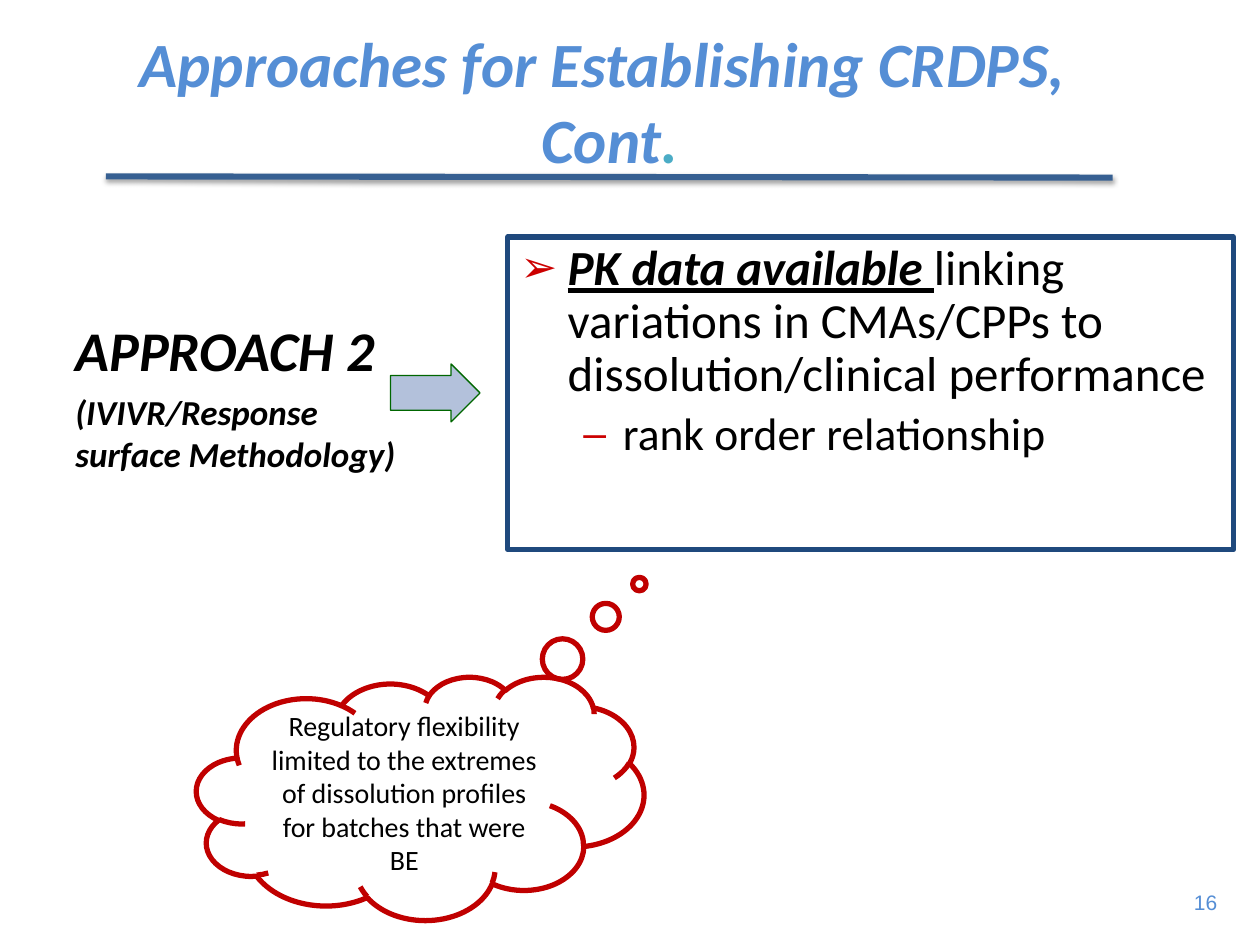
from dataclasses import dataclass, field
from typing import Optional

from lxml import etree
from pptx import Presentation
from pptx.dml.color import RGBColor
from pptx.enum.shapes import MSO_CONNECTOR, MSO_SHAPE
from pptx.enum.text import MSO_ANCHOR, MSO_AUTO_SIZE, PP_ALIGN
from pptx.oxml.ns import qn
from pptx.util import Pt

LEFT, MID, RIGHT = PP_ALIGN.LEFT, PP_ALIGN.CENTER, PP_ALIGN.RIGHT
TOP, CENTRE = MSO_ANCHOR.TOP, MSO_ANCHOR.MIDDLE
FIXED = MSO_AUTO_SIZE.NONE
CLOUD, ARROW = MSO_SHAPE.CLOUD_CALLOUT, MSO_SHAPE.RIGHT_ARROW

BLACK = RGBColor(0x00, 0x00, 0x00)
BLUE = RGBColor(0x55, 0x8E, 0xD5)
TEAL = RGBColor(0x4B, 0xAC, 0xC6)
NAVY = RGBColor(0x1F, 0x49, 0x7D)
STEEL = RGBColor(0x37, 0x60, 0x92)
PALE = RGBColor(0xB3, 0xC1, 0xDB)
GREEN = RGBColor(0x00, 0x66, 0x00)
RED = RGBColor(0xC0, 0x00, 0x00)
MARK = RGBColor(0xCC, 0x00, 0x00)


@dataclass
class Run:
    text: str
    size: float
    color: RGBColor = BLACK
    form: dict = field(default_factory=dict)


@dataclass
class Bullet:
    char: str
    margin: float
    hang: float


@dataclass
class Para:
    runs: list[Run]
    form: dict = field(default_factory=dict)
    bullet: Optional[Bullet] = None


def apply(item, form: dict) -> None:
    for key, value in form.items():
        setattr(item, key, value)


def place(shape, *box: float) -> None:
    names = ("left", "top", "width", "height")
    apply(shape, dict(zip(names, map(Pt, box))))


def outline(shape, color: RGBColor, width: float) -> None:
    shape.line.color.rgb = color
    shape.line.width = Pt(width)


def add_mark(para, mark: Bullet) -> None:
    props = para._p.get_or_add_pPr()
    props.set("marL", str(Pt(mark.margin)))
    props.set("indent", str(Pt(-mark.hang)))
    tint = etree.SubElement(props, qn("a:buClr"))
    etree.SubElement(tint, qn("a:srgbClr"), val=str(MARK))
    etree.SubElement(props, qn("a:buSzPct"), val="90000")
    etree.SubElement(props, qn("a:buFont"), typeface="Arial")
    etree.SubElement(props, qn("a:buChar"), char=mark.char)


def write(shape, paras: list[Para], font: str = "Calibri",
          anchor=TOP, wrap: bool = True) -> None:
    frame = shape.text_frame
    apply(frame, {"auto_size": FIXED, "word_wrap": wrap,
                  "vertical_anchor": anchor})
    for num, item in enumerate(paras):
        para = frame.add_paragraph() if num else frame.paragraphs[0]
        if item.bullet:
            add_mark(para, item.bullet)
        apply(para, {"space_before": Pt(0), **item.form})
        for part in item.runs:
            run = para.add_run()
            run.text = part.text
            apply(run.font, {"name": font, "size": Pt(part.size), **part.form})
            run.font.color.rgb = part.color


def add_shape(slide, kind, box: tuple, adjust: tuple):
    shape = slide.shapes.add_shape(kind, *map(Pt, box))
    shape.shadow.inherit = False
    for num, value in enumerate(adjust):
        shape.adjustments[num] = value
    return shape


def add_rule(slide, ends: tuple) -> None:
    rule = slide.shapes.add_connector(MSO_CONNECTOR.STRAIGHT, *map(Pt, ends))
    outline(rule, STEEL, 3.5)
    effects = etree.SubElement(rule._element.spPr, qn("a:effectLst"))
    shade = etree.SubElement(
        effects, qn("a:outerShdw"), blurRad=str(Pt(3.1)), dist=str(Pt(1.6)),
        dir="5400000", rotWithShape="0")
    tint = etree.SubElement(shade, qn("a:srgbClr"), val=str(BLACK))
    etree.SubElement(tint, qn("a:alpha"), val="38000")


def main() -> None:
    deck = Presentation()
    deck.slide_width, deck.slide_height = Pt(720), Pt(540)
    slide = deck.slides.add_slide(deck.slide_layouts[1])
    strong = {"bold": True, "italic": True}

    # Page number
    page = slide.shapes.add_textbox(*map(Pt, (673.2, 504.7, 29.5, 21.6)))
    write(page, [Para([Run("16", 12, BLUE)], {"alignment": RIGHT})],
          font="Arial", wrap=False)

    # Title
    title = slide.shapes.title
    place(title, 24.5, 12.2, 648, 90)
    write(title, [
        Para([Run("Approaches for Establishing CRDPS, ", 36, BLUE, strong)],
             {"alignment": MID}),
        Para([Run("Cont", 36, BLUE, strong), Run(".", 36, TEAL, strong)],
             {"alignment": MID}),
    ], anchor=CENTRE)

    # Approach label
    label = slide.shapes.add_textbox(*map(Pt, (36, 177, 211, 64)))
    write(label, [
        Para([Run("APPROACH 2", 32, form=strong)]),
        Para([Run("(IVIVR/Response surface Methodology)", 20, form=strong)],
             {"space_before": Pt(4)}),
    ])

    # Framed list
    body = slide.placeholders[1]
    place(body, 290.2, 135.4, 414.7, 178.6)
    outline(body, NAVY, 3)
    tight = {"alignment": LEFT, "line_spacing": 0.9}
    write(body, [
        Para([Run("PK data available ", 28,
                  form={**strong, "underline": True}),
              Run("linking variations in CMAs/CPPs to "
                  "dissolution/clinical performance", 28)],
             tight, Bullet("➢", 27, 27)),
        Para([Run("rank order relationship", 26)],
             {**tight, "level": 1, "space_before": Pt(5.2)},
             Bullet("–", 58.5, 22.5)),
    ])

    # Thought cloud
    cloud = add_shape(slide, CLOUD, (112.3, 386.6, 255.6, 139), (0.49, -0.88))
    cloud.fill.background()
    outline(cloud, RED, 3)
    write(cloud, [Para([Run(
        "Regulatory flexibility limited to the extremes of dissolution "
        "profiles for batches that were BE", 16)], {"alignment": MID})],
        anchor=CENTRE)

    # Arrow from label to list
    arrow = add_shape(slide, ARROW, (223.2, 208, 51.1, 33.1), (0.6, 0.5))
    arrow.fill.solid()
    arrow.fill.fore_color.rgb = PALE
    outline(arrow, GREEN, 0.75)

    # Rule below title
    add_rule(slide, (60.5, 100.8, 635.8, 101.5))

    deck.save("out.pptx")


if __name__ == "__main__":
    main()
